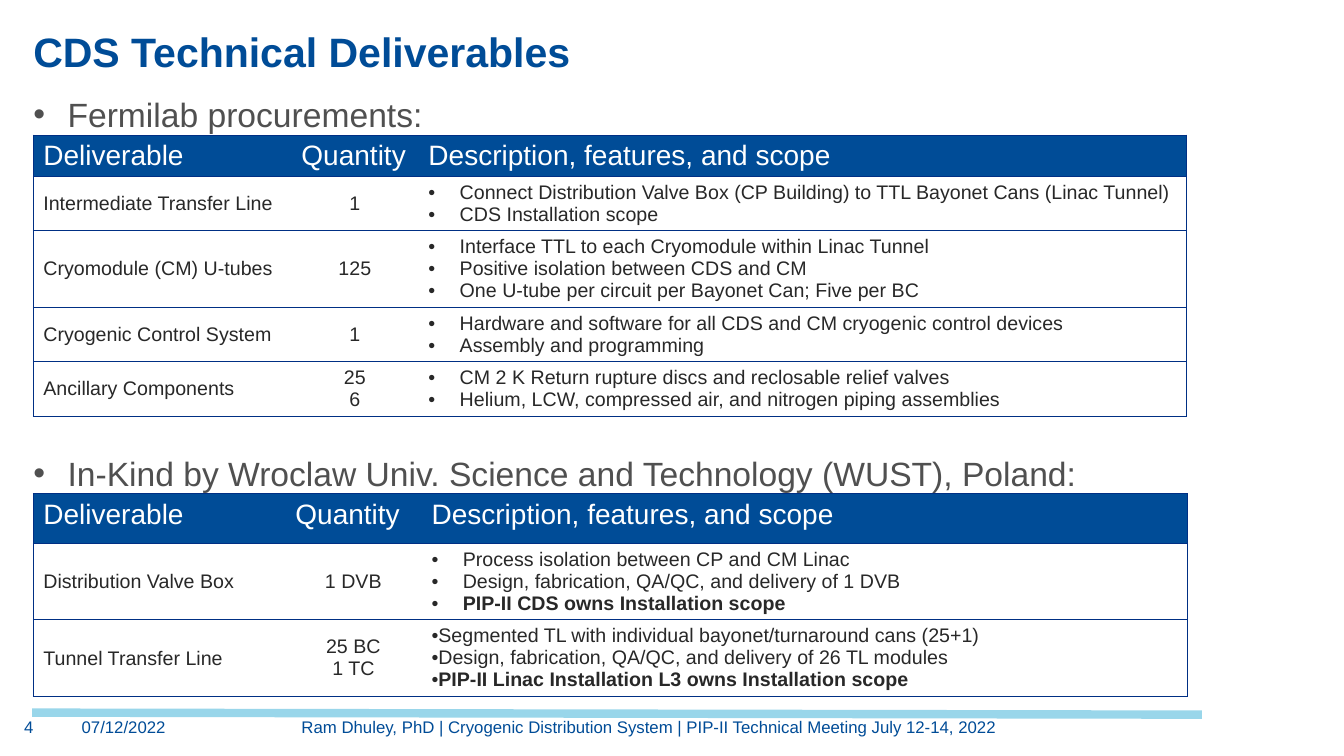
from pptx import Presentation
from pptx.dml.color import RGBColor
from pptx.enum.shapes import MSO_CONNECTOR
from pptx.enum.text import MSO_ANCHOR, MSO_AUTO_SIZE, PP_ALIGN
from pptx.oxml.ns import qn
from pptx.util import Inches, Pt
from lxml import etree

LEFT, CENTER = PP_ALIGN.LEFT, PP_ALIGN.CENTER
TOP, MIDDLE, BOTTOM = MSO_ANCHOR.TOP, MSO_ANCHOR.MIDDLE, MSO_ANCHOR.BOTTOM
NO_AUTOFIT = MSO_AUTO_SIZE.NONE
STRAIGHT = MSO_CONNECTOR.STRAIGHT

BLUE = RGBColor(0x00, 0x4C, 0x97)
NAVY = RGBColor(0x00, 0x2F, 0x84)
SKY = RGBColor(0x99, 0xD6, 0xEA)
GRAY = RGBColor(0x50, 0x50, 0x50)
DARK = RGBColor(0x28, 0x28, 0x28)
WHITE = RGBColor(0xFF, 0xFF, 0xFF)

HEADER = ["Deliverable", "Quantity", "Description, features, and scope"]
PROCUREMENTS = [
    ["Intermediate Transfer Line", "1",
     "Connect Distribution Valve Box (CP Building) to TTL Bayonet Cans (Linac Tunnel)\n"
     "CDS Installation scope"],
    ["Cryomodule (CM) U-tubes", "125",
     "Interface TTL to each Cryomodule within Linac Tunnel\n"
     "Positive isolation between CDS and CM\n"
     "One U-tube per circuit per Bayonet Can; Five per BC"],
    ["Cryogenic Control System", "1",
     "Hardware and software for all CDS and CM cryogenic control devices\n"
     "Assembly and programming"],
    ["Ancillary Components", "25\n6",
     "CM 2 K Return rupture discs and reclosable relief valves\n"
     "Helium, LCW, compressed air, and nitrogen piping assemblies"],
]
IN_KIND = [
    ["Distribution Valve Box", "1 DVB",
     "Process isolation between CP and CM Linac\n"
     "Design, fabrication, QA/QC, and delivery of 1 DVB\n"
     "PIP-II CDS owns Installation scope"],
    ["Tunnel Transfer Line", "25 BC\n1 TC",
     "Segmented TL with individual bayonet/turnaround cans (25+1)\n"
     "Design, fabrication, QA/QC, and delivery of 26 TL modules\n"
     "PIP-II Linac Installation L3 owns Installation scope"],
]


class Deck:
    """Holds the style and the current slide, and adds elements to it."""

    font = "Arial"

    def __init__(self, prs):
        self.s = prs.slides.add_slide(prs.slide_layouts[5])

    def style(self, tf, size, color, align=LEFT, bold=False):
        for p in tf.paragraphs:
            p.alignment = align
            for r in p.runs:
                r.font.name = self.font
                r.font.size = Pt(size)
                r.font.bold = bold
                r.font.color.rgb = color

    def bullet(self, p, margin, hanging):
        pPr = p._p.get_or_add_pPr()
        pPr.set("marL", str(Inches(margin)))
        pPr.set("indent", str(-Inches(hanging)))
        etree.SubElement(pPr, qn("a:buFont"), typeface=self.font)
        etree.SubElement(pPr, qn("a:buChar"), char="•")

    def frame(self, sp, box, text, anchor):
        sp.left, sp.top, sp.width, sp.height = map(Inches, box)
        tf = sp.text_frame
        tf.text = text
        tf.word_wrap = True
        tf.auto_size = NO_AUTOFIT
        tf.vertical_anchor = anchor
        tf.margin_left = tf.margin_right = tf.margin_top = tf.margin_bottom = 0
        return tf

    def title(self, text, box):
        tf = self.frame(self.s.shapes.title, box, text, BOTTOM)
        self.style(tf, 29.3, BLUE, bold=True)

    def text(self, text, box, size=12, color=BLUE, align=LEFT):
        sp = self.s.shapes.add_textbox(*map(Inches, box))
        tf = self.frame(sp, box, text, TOP)
        self.style(tf, size, color, align)
        return tf

    def heading(self, text, top):
        tf = self.text(text, (0.33, top, 12.65, 0.41), 24, GRAY)
        self.bullet(tf.paragraphs[0], 0.34, 0.34)

    def rule(self, start, end):
        line = self.s.shapes.add_connector(STRAIGHT, *map(Inches, start + end))
        line.line.color.rgb = SKY
        line.line.width = Pt(6)
        etree.SubElement(line._element.spPr, qn("a:effectLst"))

    def borders(self, cell, sides):
        tcPr = cell._tc.get_or_add_tcPr()
        for side in "LRTB":
            ln = etree.SubElement(tcPr, qn(f"a:ln{side}"), w=str(Pt(0.75)))
            if side in sides:
                fill = etree.SubElement(ln, qn("a:solidFill"))
                etree.SubElement(fill, qn("a:srgbClr"), val=str(NAVY))
            else:
                etree.SubElement(ln, qn("a:noFill"))

    def table(self, top, rows, widths, heights, header_anchor, scope_anchor):
        rows = [HEADER] + rows
        frame = self.s.shapes.add_table(
            len(rows), len(widths), Inches(0.33), Inches(top),
            Inches(sum(widths)), Inches(sum(heights)))
        tbl = frame.table
        tbl.horz_banding = False
        for col, width in zip(tbl.columns, widths):
            col.width = Inches(width)
        for row, height in zip(tbl.rows, heights):
            row.height = Inches(height)
        for i, row in enumerate(rows):
            for j, text in enumerate(row):
                cell = tbl.cell(i, j)
                cell.text = text
                self.borders(cell, ("LTB", "TB", "TBR")[j])
                cell.fill.solid()
                cell.fill.fore_color.rgb = WHITE if i else BLUE
                if i:
                    cell.vertical_anchor = scope_anchor if j == 2 else MIDDLE
                    self.style(cell.text_frame, 14, DARK, CENTER if j == 1 else LEFT)
                else:
                    cell.vertical_anchor = header_anchor
                    self.style(cell.text_frame, 20, WHITE)
        return tbl

    def scope_bullets(self, tbl, row, margin=0.31, bold_last=False):
        paragraphs = tbl.cell(row, 2).text_frame.paragraphs
        for p in paragraphs:
            self.bullet(p, margin, 0.31)
        paragraphs[-1].runs[0].font.bold = bold_last


def main():
    prs = Presentation()
    prs.slide_width, prs.slide_height = Inches(13.33), Inches(7.5)
    deck = Deck(prs)
    deck.rule((0.32, 7.07), (11.92, 7.09))
    deck.title("CDS Technical Deliverables", (0.33, 0.28, 12.67, 0.47))

    deck.heading("Fermilab procurements:", 0.93)
    tbl = deck.table(1.34, PROCUREMENTS, [2.56, 1.26, 7.62],
                     [0.41, 0.54, 0.76, 0.54, 0.54], MIDDLE, MIDDLE)
    for row in range(1, len(PROCUREMENTS) + 1):
        deck.scope_bullets(tbl, row)

    deck.heading("In-Kind by Wroclaw Univ. Science and Technology (WUST), Poland:", 4.49)
    tbl = deck.table(4.9, IN_KIND, [2.5, 1.35, 7.6], [0.49, 0.76, 0.76], TOP, TOP)
    for row, margin in enumerate((0.31, 0), start=1):
        deck.scope_bullets(tbl, row, margin, bold_last=True)

    deck.text("4", (0.24, 7.11, 0.45, 0.26))
    deck.text("07/12/2022", (0.81, 7.11, 1.03, 0.27))
    deck.text("Ram Dhuley, PhD | Cryogenic Distribution System | "
              "PIP-II Technical Meeting July 12-14, 2022",
              (1.96, 7.11, 8.96, 0.11), align=CENTER)
    prs.save("out.pptx")


if __name__ == "__main__":
    main()
